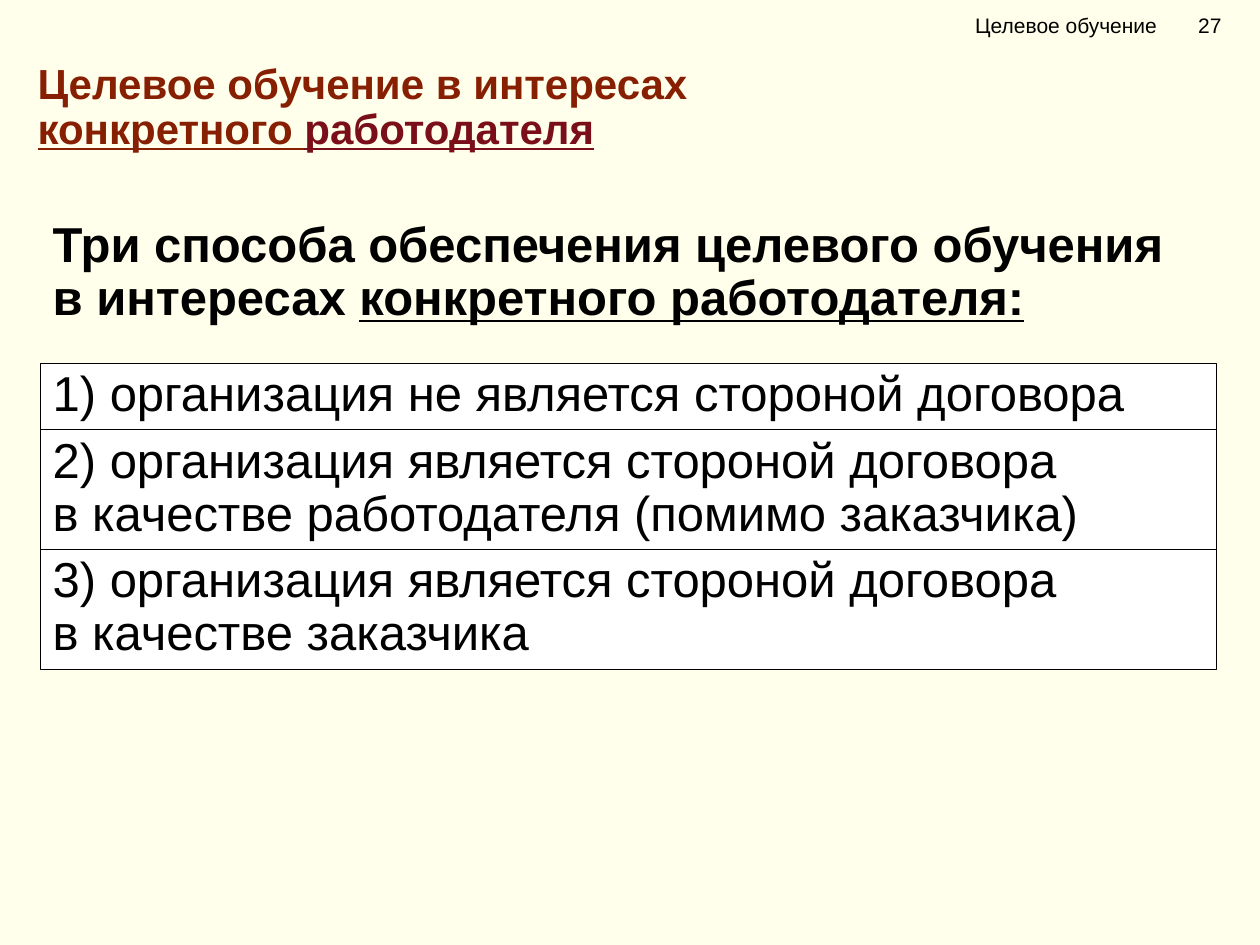
from dataclasses import dataclass

from lxml import etree
from pptx import Presentation
from pptx.dml.color import RGBColor
from pptx.enum import shapes, text
from pptx.oxml import ns
from pptx.util import Inches, Pt

CREAM = RGBColor(0xFF, 0xFF, 0xEB)
WHITE = RGBColor(0xFF, 0xFF, 0xFF)
BLACK = RGBColor(0, 0, 0)
RUST = RGBColor(0x87, 0x1F, 0x03)
WINE = RGBColor(0x7B, 0x0F, 0x19)

LEFT, WIDTH = 0.32, 9.33
OPTIONS_TOP = 2.88
LINE_HEIGHT, ROW_PADDING = 0.42, 0.11


@dataclass(frozen=True)
class Span:
    words: str
    underline: bool = False
    color: RGBColor | None = None


@dataclass(frozen=True)
class Style:
    size: int
    color: RGBColor = BLACK
    bold: bool = False
    spacing: float = 0.9


Lines = list[list[Span]]

HEADER = Style(12, spacing=1.0)
TITLE = Style(24, RUST, bold=True)
LEAD = Style(28, bold=True)
BODY = Style(28)

OPTIONS = [
    ["1) организация не является стороной договора"],
    ["2) организация является стороной договора",
     "в качестве работодателя (помимо заказчика)"],
    ["3) организация является стороной договора",
     "в качестве заказчика"],
]


def write(tf, lines: Lines, style: Style) -> None:
    tf.word_wrap = True
    for i, spans in enumerate(lines):
        p = tf.add_paragraph() if i else tf.paragraphs[0]
        p.alignment = text.PP_ALIGN.LEFT
        p.line_spacing = style.spacing
        p.font.name = "Arial"
        p.font.size = Pt(style.size)
        p.font.bold = style.bold
        p.font.color.rgb = style.color
        for span in spans:
            r = p.add_run()
            r.text = span.words
            if span.underline:
                r.font.underline = True
            if span.color is not None:
                r.font.color.rgb = span.color


def add_text(s, left: float, top: float, width: float, height: float,
             lines: Lines, style: Style):
    sp = s.shapes.add_textbox(Inches(left), Inches(top), Inches(width), Inches(height))
    write(sp.text_frame, lines, style)
    return sp


def add_option(s, top: float, height: float, lines: list[str]) -> None:
    sp = s.shapes.add_shape(shapes.MSO_SHAPE.RECTANGLE, Inches(LEFT), Inches(top),
                            Inches(WIDTH), Inches(height))
    sp.shadow.inherit = False
    sp.fill.solid()
    sp.fill.fore_color.rgb = WHITE
    sp.line.color.rgb = BLACK
    sp.line.width = Pt(0.25)
    sp.text_frame.vertical_anchor = text.MSO_ANCHOR.TOP
    write(sp.text_frame, [[Span(line)] for line in lines], BODY)


def add_header(s) -> None:
    sp = add_text(s, 7.44, 0, 2.56, 0.4, [[Span("Целевое обучение\t27")]], HEADER)
    tf = sp.text_frame
    tf.vertical_anchor = text.MSO_ANCHOR.MIDDLE
    tf.margin_left = Inches(0.3)
    pPr = tf.paragraphs[0]._p.get_or_add_pPr()
    tabs = etree.Element(ns.qn("a:tabLst"))
    etree.SubElement(tabs, ns.qn("a:tab"), pos=str(Inches(1.77)), algn="l")
    pPr.find(ns.qn("a:defRPr")).addprevious(tabs)


def main() -> None:
    prs = Presentation()
    prs.slide_width, prs.slide_height = Inches(10), Inches(7.5)
    s = prs.slides.add_slide(prs.slide_layouts[6])
    s.background.fill.solid()
    s.background.fill.fore_color.rgb = CREAM

    add_text(s, 0.2, 0.45, 9.41, 0.47, [
        [Span("Целевое обучение в интересах")],
        [Span("конкретного ", underline=True),
         Span("работодателя", underline=True, color=WINE)],
    ], TITLE)
    add_text(s, LEFT, 1.7, WIDTH, 0.95, [
        [Span("Три способа обеспечения целевого обучения в интересах "),
         Span("конкретного работодателя:", underline=True)],
    ], LEAD)

    top = OPTIONS_TOP
    for lines in OPTIONS:
        height = ROW_PADDING + LINE_HEIGHT * len(lines)
        add_option(s, top, height, lines)
        top += height

    add_header(s)
    prs.save("out.pptx")


if __name__ == "__main__":
    main()
